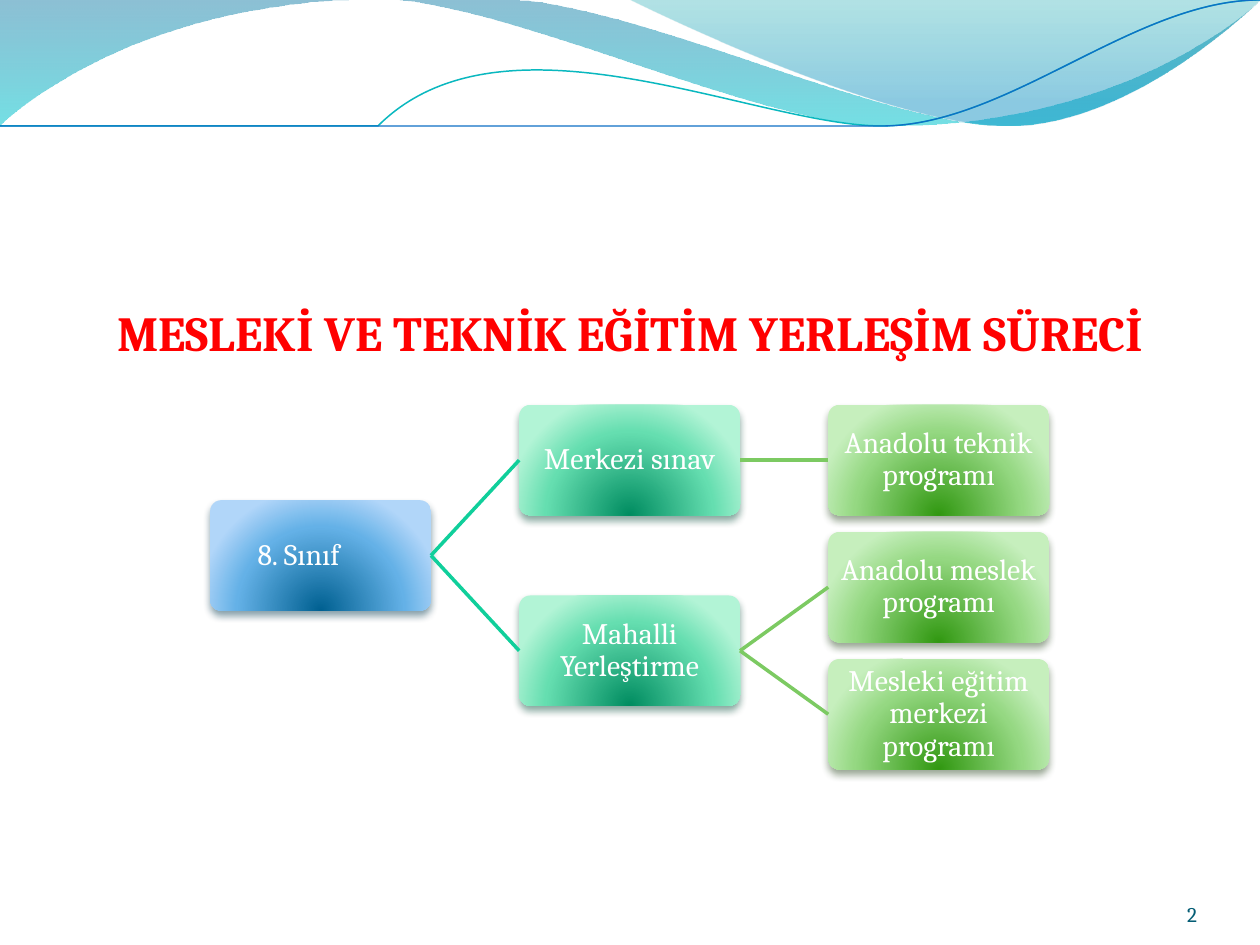
from lxml import etree
from pptx import Presentation
from pptx.dml.color import RGBColor
from pptx.enum import shapes, text
from pptx.oxml import ns, parse_xml
from pptx.util import Pt

COLORS = {
    "title": "FF0000", "number": "045D75", "label": "FFFFFF",
    "teal line": "0AB8BF", "blue line": "0F6FC6",
    "to exam": "10CF9B", "to program": "7CCA62",
}
# Box styles by column: centre, middle and edge of the glow, then the shadow
BOX_STYLES = [
    ("006091", "64B1E7", "B1D6F9", "00374C"),
    ("008C60", "65DEB0", "B2F4D6", "044A37"),
    ("319811", "95D882", "C6EFBD", "2B4821"),
]
FONT = "Cambria"


def set_gradient(shape, stops, direction):
    """Fill with (position %, colour, opacity %) stops and an a:lin or a:path element."""
    shape.fill.background()
    stop_xml = "".join(
        f'<a:gs pos="{pos * 1000}"><a:srgbClr val="{color}">'
        f'<a:alpha val="{opacity * 1000}"/></a:srgbClr></a:gs>'
        for pos, color, opacity in stops)
    properties = shape._element.spPr
    properties.replace(properties.find(ns.qn("a:noFill")), parse_xml(
        f'<a:gradFill {ns.nsdecls("a")} rotWithShape="1">'
        f'<a:gsLst>{stop_xml}</a:gsLst>{direction}</a:gradFill>'))


def add_curve(page, start, segments, closed):
    """Draw a freeform in inches; a segment of three points is a cubic curve."""
    builder = page.shapes.build_freeform(*start, scale=Pt(72))
    builder.add_line_segments([p for segment in segments for p in segment], close=closed)
    shape = builder.convert_to_shape()
    shape.shadow.inherit = False
    lines = list(shape._element.spPr.iter(ns.qn("a:lnTo")))
    for segment in segments:
        steps, lines = lines[:len(segment)], lines[len(segment):]
        if len(segment) == 3:
            steps[0].tag = ns.qn("a:cubicBezTo")
            for step in steps[1:]:
                steps[0].append(step[0])
                step.getparent().remove(step)
    return shape


deck = Presentation()
deck.slide_width, deck.slide_height = Pt(720), Pt(540)
page = deck.slides.add_slide(deck.slide_layouts[5])

# Wave bands along the top
bands = [
    ((0, 0), [
        [(4.4, -0.01)],
        [(4.76, 0.17), (6.64, 0.63), (7.58, 0.63)],
        [(8.53, 0.63), (9.58, 0.26), (10, 0.09)],
        [(10.01, 0.36)],
        [(9.83, 0.44), (8.7, 0.76), (7.46, 0.75)],
        [(6.22, 0.75), (3.82, 0.28), (2.57, 0.34)],
        [(1.29, 0.36), (0.46, 0.83), (-0.01, 1.13)],
    ], [(0, "0074A1", 45), (100, "00C6CF", 55)]),
    ((4.79, -0.01), [
        [(5.09, 0.11), (6.82, 0.62), (7.69, 0.65)],
        [(8.56, 0.69), (9.61, 0.32), (10, 0.21)],
        [(10, 0)],
    ], [(0, "00A1A9", 30), (80, "008BBF", 45)]),
]
for start, segments, stops in bands:
    band = add_curve(page, start, segments, True)
    set_gradient(band, stops, '<a:lin ang="5400000" scaled="0"/>')
    band.line.fill.background()

strands = [
    ("teal line", 0.85, (0, 1.11), [
        [(0.48, 0.93), (1.58, 0.57), (2.77, 0.52)],
        [(3.95, 0.47), (5.93, 0.89), (7.13, 0.8)],
        [(8.33, 0.71), (9.38, 0.15), (9.98, -0.02)],
    ]),
    ("blue line", 0.75, (0, 1.04), [
        [(0.47, 0.96), (1.64, 0.61), (2.83, 0.56)],
        [(4.03, 0.51), (5.97, 0.84), (7.17, 0.75)],
        [(8.36, 0.67), (9.41, 0.21), (10, 0.06)],
    ]),
]
for color, width, start, segments in strands:
    strand = add_curve(page, start, segments, False)
    strand.fill.background()
    strand.line.color.rgb = RGBColor.from_string(COLORS[color])
    strand.line.width = Pt(width)

# Title
title = page.shapes.title
title.left, title.top, title.width, title.height = Pt(36), Pt(152.6), Pt(648), Pt(345.6)
frame = title.text_frame
frame.text = "MESLEKİ VE TEKNİK EĞİTİM YERLEŞİM SÜRECİ"
frame.auto_size = text.MSO_AUTO_SIZE.NONE
frame.vertical_anchor = text.MSO_ANCHOR.TOP
para = frame.paragraphs[0]
para.alignment = text.PP_ALIGN.CENTER
para.line_spacing = 1.5
para.space_before = Pt(5.6)
font = para.runs[0].font
font.name, font.size, font.bold = FONT, Pt(28), True
font.color.rgb = RGBColor.from_string(COLORS["title"])

# Page number
number = page.shapes.add_textbox(Pt(624), Pt(500.5), Pt(60), Pt(28.8))
frame = number.text_frame
frame.word_wrap = True
frame.margin_left = frame.margin_right = frame.margin_top = frame.margin_bottom = 0
frame.vertical_anchor = text.MSO_ANCHOR.BOTTOM
frame.text = "2"
para = frame.paragraphs[0]
para.alignment = text.PP_ALIGN.RIGHT
font = para.runs[0].font
font.name, font.size = FONT, Pt(12)
font.color.rgb = RGBColor.from_string(COLORS["number"])

# Placement tree: label, column, row (a parent sits midway between its children), parent
nodes = [
    ("8. Sınıf\t", 0, 0.75, None),
    ("Merkezi sınav", 1, 0, 0),
    ("Anadolu teknik programı", 2, 0, 1),
    ("Mahalli Yerleştirme", 1, 1.5, 0),
    ("Anadolu meslek programı", 2, 1, 3),
    ("Mesleki eğitim merkezi programı", 2, 2, 3),
]
boxes = []
for label, column, row, parent in nodes:
    inner, middle, outer, shade = BOX_STYLES[column]
    box = page.shapes.add_shape(
        shapes.MSO_SHAPE.ROUNDED_RECTANGLE,
        Pt(120.1 + 176.6 * column), Pt(231.4 + 72.6 * row), Pt(126.2), Pt(63.1))
    box.adjustments[0] = 0.1
    set_gradient(
        box, [(0, inner, 100), (68, middle, 100), (100, outer, 100)],
        '<a:path path="circle"><a:fillToRect l="50000" t="130000" r="50000" b="-30000"/></a:path>')
    box.line.fill.background()
    box.shadow.inherit = False
    box._element.spPr.find(ns.qn("a:effectLst")).append(parse_xml(
        f'<a:outerShdw {ns.nsdecls("a")} blurRad="{Pt(4.5)}" dist="{Pt(3)}" dir="5400000" '
        f'rotWithShape="0"><a:srgbClr val="{shade}"><a:alpha val="48000"/></a:srgbClr></a:outerShdw>'))
    frame = box.text_frame
    frame.text = label
    frame.word_wrap = True
    frame.margin_left = frame.margin_right = frame.margin_top = frame.margin_bottom = Pt(2.7)
    frame.vertical_anchor = text.MSO_ANCHOR.MIDDLE
    para = frame.paragraphs[0]
    para.alignment = text.PP_ALIGN.CENTER
    para.line_spacing = 0.9
    font = para.runs[0].font
    font.name, font.size = FONT, Pt(17)
    font.color.rgb = RGBColor.from_string(COLORS["label"])
    boxes.append(box)

    if parent is not None:
        link = page.shapes.add_connector(shapes.MSO_CONNECTOR.STRAIGHT, 0, 0, 0, 0)
        link.begin_connect(boxes[parent], 3)
        link.end_connect(box, 1)
        link.line.color.rgb = RGBColor.from_string(
            COLORS["to exam" if column == 1 else "to program"])
        link.line.width = Pt(2)
        etree.SubElement(link._element.spPr, ns.qn("a:effectLst"))

deck.save("out.pptx")
